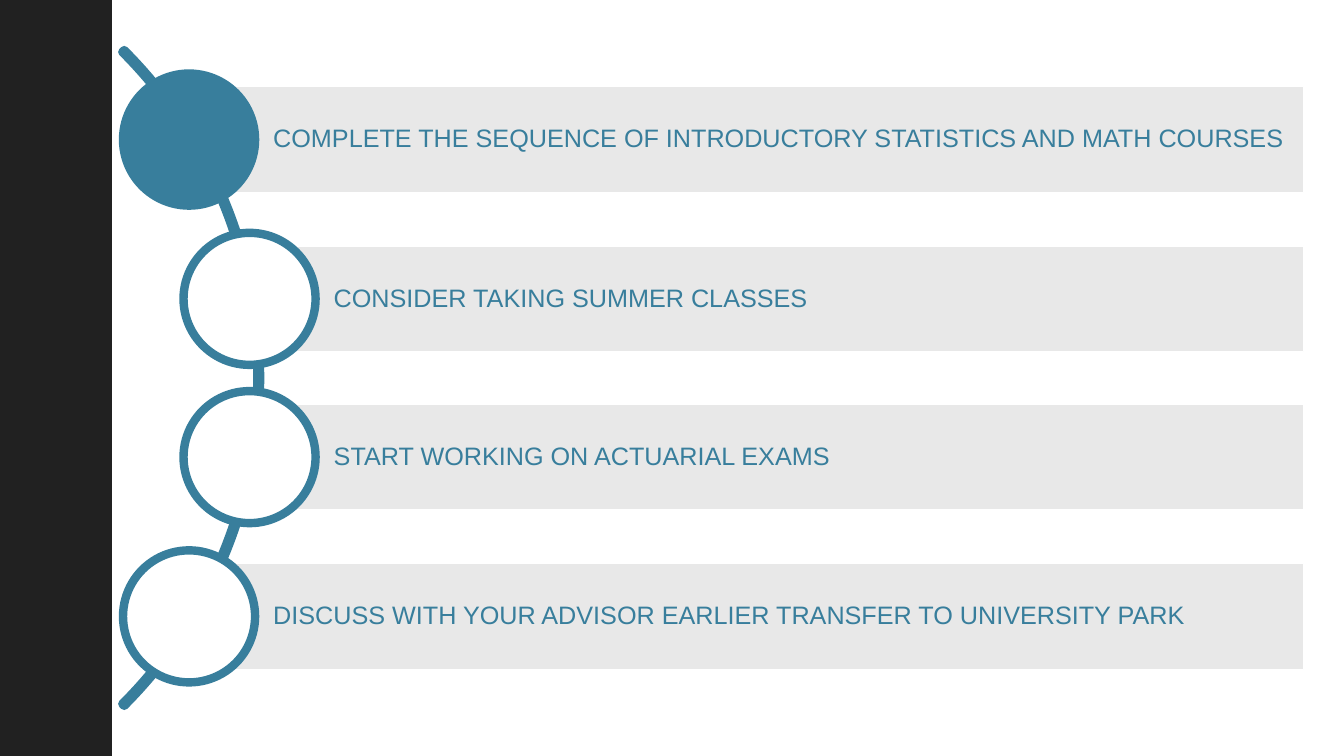
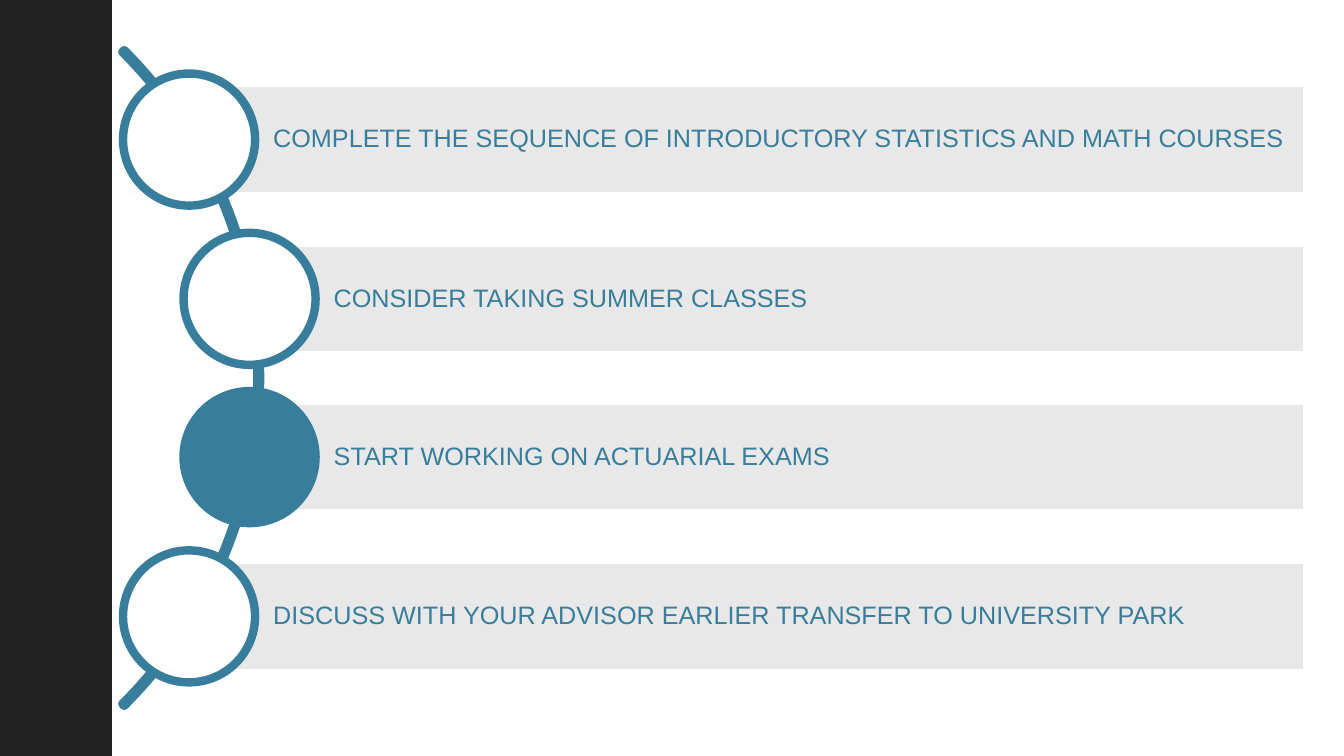
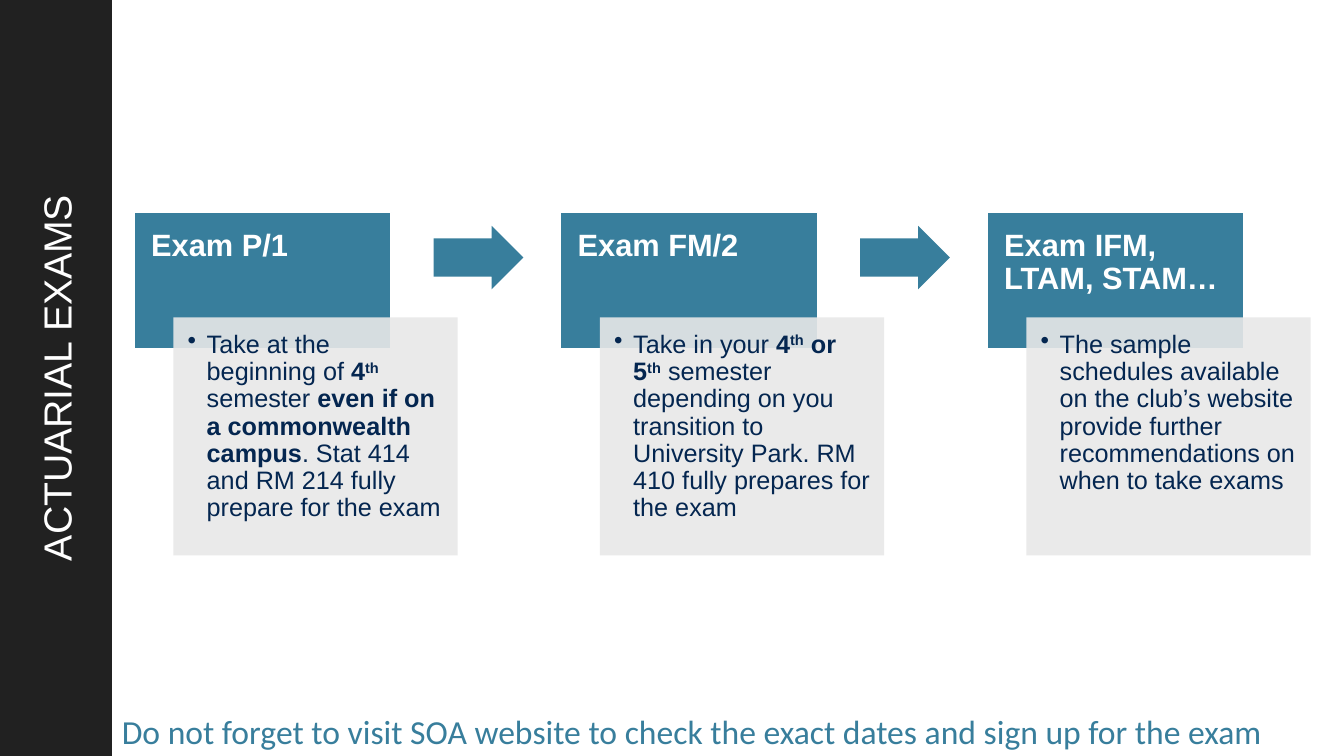
from lxml.etree import SubElement
from pptx import Presentation
from pptx.dml.color import RGBColor
from pptx.enum.shapes import MSO_SHAPE
from pptx.enum.text import MSO_ANCHOR, MSO_AUTO_SIZE, PP_ALIGN
from pptx.oxml.ns import qn
from pptx.util import Emu, Pt

TEAL, NAVY, GREY, DARK, WHITE = "387E9C", "042650", "E8E8E8", "212121", "FFFFFF"
FONT = "Arial"
WIDTH, HEIGHT = 1333, 750


def px(n):
    """One hundred px make an inch."""
    return Emu(n * 9144)


def color(hex_string):
    return RGBColor.from_string(hex_string)


class Deck:
    def __init__(self):
        self.prs = Presentation()
        self.prs.slide_width, self.prs.slide_height = px(WIDTH), px(HEIGHT)

    def new_slide(self):
        self.s = self.prs.slides.add_slide(self.prs.slide_layouts[6])

    def shape(self, kind, x, y, w, h, fill, line=None, weight=1, adjust=(), alpha=None):
        sp = self.s.shapes.add_shape(kind, px(x), px(y), px(w), px(h))
        sp.shadow.inherit = False
        for i, value in enumerate(adjust):
            sp.adjustments[i] = value
        sp.fill.solid()
        sp.fill.fore_color.rgb = color(fill)
        if alpha:
            clr = sp._element.spPr.find(qn("a:solidFill")).find(qn("a:srgbClr"))
            SubElement(clr, qn("a:alpha")).set("val", str(alpha * 1000))
        if line:
            sp.line.color.rgb = color(line)
            sp.line.width = Pt(weight)
        else:
            sp.line.fill.background()
        return sp

    def frame(self, sp, insets=(10, 5, 10, 5), anchor=MSO_ANCHOR.TOP):
        tf = sp.text_frame
        tf.word_wrap = True
        tf.vertical_anchor = anchor
        tf.margin_left, tf.margin_top, tf.margin_right, tf.margin_bottom = map(px, insets)
        return tf

    def add_text(self, tf, parts, size, fill, font=FONT, align=PP_ALIGN.LEFT, spacing=0.9):
        """Parts are (text, style) pairs: b is bold, ^ is superscript."""
        p = tf.paragraphs[0]
        p.alignment, p.line_spacing = align, spacing
        for text, style in parts:
            r = p.add_run()
            r.text = text
            r.font.name, r.font.size = font, Pt(size)
            r.font.color.rgb = color(fill)
            r.font.bold = "b" in style
            if "^" in style:
                r._r.get_or_add_rPr().set("baseline", "30000")

    def band(self, title=None):
        sp = self.shape(MSO_SHAPE.RECTANGLE, 0, 0, 111, HEIGHT, DARK)
        if title:
            tf = self.frame(sp, anchor=MSO_ANCHOR.MIDDLE)
            tf._txBody.bodyPr.set("vert", "vert270")
            self.add_text(tf, [(title, "")], 28, WHITE, align=PP_ALIGN.CENTER, spacing=1.0)

    def arc(self):
        self.shape(MSO_SHAPE.BLOCK_ARC, -662, -85, 920, 920, TEAL, TEAL, 6,
                   adjust=(189, 27, 0.003))

    def step(self, x, y, text, active):
        bar = self.shape(MSO_SHAPE.RECTANGLE, x, y, 1293 - x, 105, GREY, WHITE)
        tf = self.frame(bar, (83, 5, 5, 5), MSO_ANCHOR.MIDDLE)
        self.add_text(tf, [(text, "")], 18, TEAL)
        self.shape(MSO_SHAPE.OVAL, x - 66, y - 13, 131, 131,
                   TEAL if active else WHITE, TEAL, 6)

    def exam(self, x, name, details):
        head = self.shape(MSO_SHAPE.RECTANGLE, x, 211, 255, 135, TEAL, WHITE)
        self.add_text(self.frame(head, (17, 17, 17, 9)), [(name, "b")], 22, WHITE)
        body = self.shape(MSO_SHAPE.RECTANGLE, x + 39, 315, 282, 236, GREY, alpha=90)
        tf = self.frame(body, (14, 14, 14, 14))
        pPr = tf.paragraphs[0]._p.get_or_add_pPr()
        pPr.set("marL", str(px(19)))
        pPr.set("indent", str(px(-19)))
        SubElement(pPr, qn("a:buChar")).set("char", "•")
        self.add_text(tf, details, 18, NAVY)

    def arrow(self, x):
        self.shape(MSO_SHAPE.RIGHT_ARROW, x, 224, 89, 63, TEAL, adjust=(0.6, 0.5))

    def footer(self, text):
        sp = self.s.shapes.add_textbox(px(111), px(700), px(1155), px(50))
        tf = self.frame(sp)
        tf.auto_size = MSO_AUTO_SIZE.SHAPE_TO_FIT_TEXT
        self.add_text(tf, [(text, "")], 24, TEAL, font="Calibri", spacing=1.0)


STEPS = [
    (188, "COMPLETE THE SEQUENCE OF INTRODUCTORY STATISTICS AND MATH COURSES"),
    (248, "CONSIDER TAKING SUMMER CLASSES"),
    (248, "START WORKING ON ACTUARIAL EXAMS"),
    (188, "DISCUSS WITH YOUR ADVISOR EARLIER TRANSFER TO UNIVERSITY PARK"),
]

EXAMS = [
    ("Exam P/1", [
        ("Take at the beginning of ", ""), ("4", "b"), ("th ", "b^"), ("semester ", ""),
        ("even if on a commonwealth campus", "b"),
        (". Stat 414 and RM 214 fully prepare for the exam", "")]),
    ("Exam FM/2", [
        ("Take in your ", ""), ("4", "b"), ("th", "b^"), (" or 5", "b"), ("th", "b^"),
        (" semester depending on you transition to University Park. "
         "RM 410 fully prepares for the exam", "")]),
    ("Exam IFM, LTAM, STAM…", [
        ("The sample schedules available on the club’s website provide further "
         "recommendations on when to take exams", "")]),
]


def main():
    deck = Deck()

    # Step lists, each with one step highlighted
    for current in (0, 2):
        deck.new_slide()
        deck.arc()
        for i, (x, text) in enumerate(STEPS):
            deck.step(x, round(86 + 157.67 * i), text, i == current)
        deck.band()

    # Exam sequence
    deck.new_slide()
    deck.band("ACTUARIAL EXAMS")
    for i, (name, details) in enumerate(EXAMS):
        x = 133 + 423 * i
        deck.exam(x, name, details)
        if i < len(EXAMS) - 1:
            deck.arrow(x + 297)
    deck.footer("Do not forget to visit SOA website to check the exact dates "
                "and sign up for the exam")

    deck.prs.save("out.pptx")


if __name__ == "__main__":
    main()
